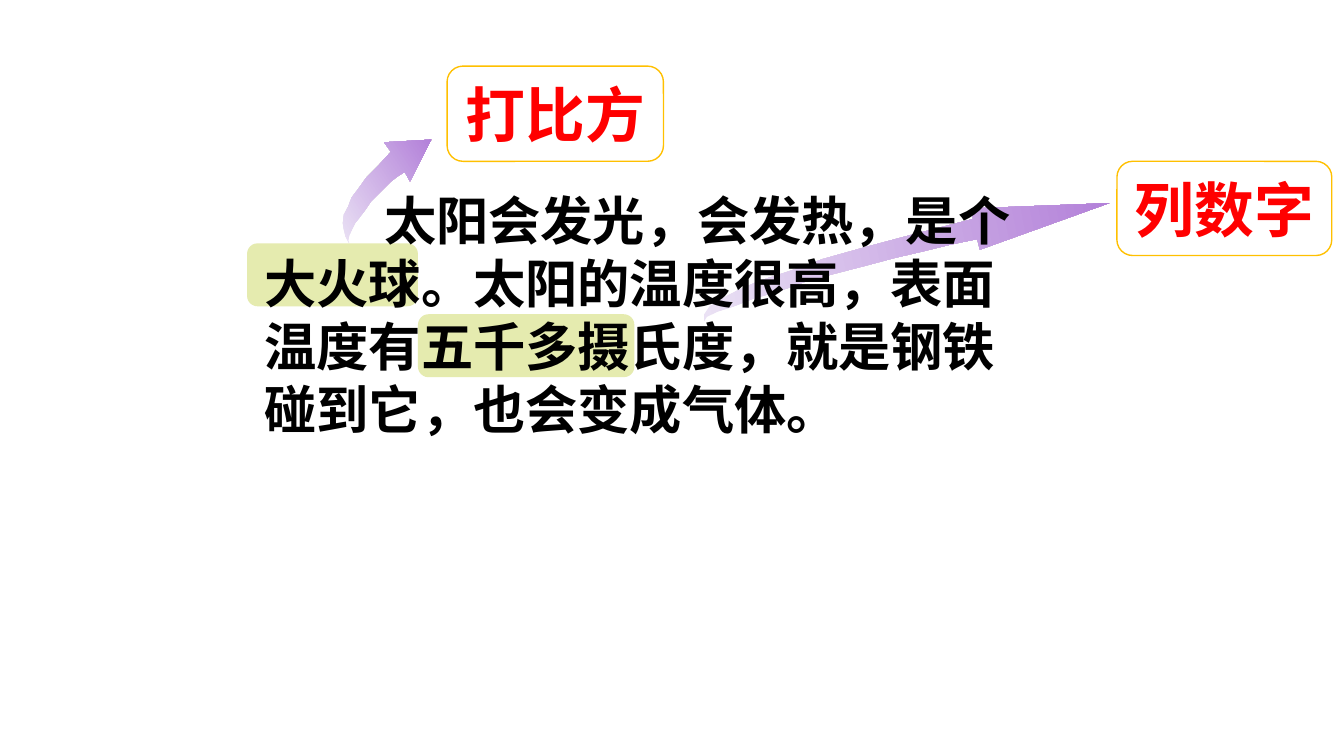
import pptx
import pptx.dml.color
import pptx.enum.shapes
import pptx.enum.text
import pptx.oxml
import pptx.util

COLOURS = {
    "highlight": "E5EBAF",
    "arrow_tail": "EAE1F4",
    "arrow_head": "B381D9",
    "border": "FFC000",
    "label": "FF0000",
    "body": "000000",
}

NUMBER_ARROW = [
    (13.31, 6.07), (13.31, 5.94), (13.41, 5.79), (13.61, 5.66), (13.94, 5.49),
    (14.35, 5.31), (14.91, 5.13), (15.54, 4.9), (16.36, 4.67), (17.3, 4.42),
    (18.39, 4.14), (18.36, 3.94), (20.96, 3.84), (18.52, 4.72), (18.47, 4.52),
    (17.98, 4.62), (17.45, 4.75), (16.89, 4.88), (16.33, 5.03), (15.75, 5.18),
    (15.21, 5.33), (14.71, 5.51), (14.25, 5.64), (13.87, 5.79), (13.56, 5.89),
    (13.36, 5.99),
]
METAPHOR_ARROW = [
    (6.6, 4.6), (6.53, 4.47), (6.5, 4.34), (6.48, 4.22), (6.5, 4.06),
    (6.58, 3.91), (6.65, 3.73), (6.78, 3.56), (6.93, 3.35), (7.16, 3.12),
    (7.39, 2.87), (7.26, 2.69), (8.15, 2.64), (7.75, 3.43), (7.65, 3.25),
    (7.52, 3.33), (7.39, 3.43), (7.26, 3.56), (7.14, 3.68), (7.01, 3.81),
    (6.91, 3.96), (6.81, 4.09), (6.71, 4.22), (6.65, 4.34), (6.6, 4.45),
    (6.58, 4.55),
]
PASSAGE = "太阳会发光，会发热，是个大火球。太阳的温度很高，表面温度有五千多摄氏度，就是钢铁碰到它，也会变成气体。"


class LessonSlide:
    """Draws the styled elements of the lesson on one slide."""

    label_font = "Times New Roman"
    body_font = "Noto Sans CJK SC"

    def __init__(self, slide):
        self.slide = slide

    def colour(self, name):
        return pptx.dml.color.RGBColor.from_string(COLOURS[name])

    def lengths(self, *values):
        return [pptx.util.Cm(value) for value in values]

    def add_run(self, paragraph, text, font_name, size, colour):
        run = paragraph.add_run()
        run.text = text
        run.font.name = font_name
        run.font.size = pptx.util.Pt(size)
        run.font.bold = True
        run.font.color.rgb = self.colour(colour)
        return run

    def rounded_box(self, *place):
        shape = self.slide.shapes.add_shape(
            pptx.enum.shapes.MSO_SHAPE.ROUNDED_RECTANGLE, *self.lengths(*place))
        shape.shadow.inherit = False
        return shape

    def highlight(self, *place):
        shape = self.rounded_box(*place)
        shape.fill.solid()
        shape.fill.fore_color.rgb = self.colour("highlight")
        shape.line.fill.background()

    def label(self, text, *place):
        shape = self.rounded_box(*place)
        shape.fill.background()
        shape.line.color.rgb = self.colour("border")
        shape.line.width = pptx.util.Pt(0.75)
        frame = shape.text_frame
        frame.word_wrap = False
        frame.vertical_anchor = pptx.enum.text.MSO_ANCHOR.MIDDLE
        paragraph = frame.paragraphs[0]
        paragraph.alignment = pptx.enum.text.PP_ALIGN.CENTER
        self.add_run(paragraph, text, self.label_font, 32, "label")

    def curved_arrow(self, points, angle):
        start, *others = [self.lengths(*point) for point in points]
        builder = self.slide.shapes.build_freeform(*start)
        builder.add_line_segments(others, close=True)
        shape = builder.convert_to_shape()
        shape.shadow.inherit = False
        shape.line.fill.background()
        shape.fill.gradient()
        shape.fill.gradient_angle = angle
        for stop, name in zip(shape.fill.gradient_stops, ("arrow_tail", "arrow_head")):
            stop.color.rgb = self.colour(name)

    def passage(self, text, *place):
        box = self.slide.shapes.add_textbox(*self.lengths(*place))
        box.text_frame.word_wrap = True
        paragraph = box.text_frame.paragraphs[0]
        paragraph.line_spacing = pptx.util.Pt(33.75)
        properties = paragraph._p.get_or_add_pPr()
        properties.set("marL", str(pptx.util.Cm(0.71)))
        properties.set("indent", str(pptx.util.Cm(2.26)))
        run = self.add_run(paragraph, text, self.body_font, 28, "body")
        east_asian = pptx.oxml.parse_xml(
            '<a:ea xmlns:a="http://schemas.openxmlformats.org/drawingml/2006/main" '
            f'typeface="{self.body_font}"/>')
        run.font._element.append(east_asian)


def main():
    presentation = pptx.Presentation()
    presentation.slide_width = pptx.util.Cm(25.4)
    presentation.slide_height = presentation.slide_width * 9 // 16
    lesson = LessonSlide(presentation.slides.add_slide(presentation.slide_layouts[6]))
    lesson.highlight(7.9, 5.94, 4.09, 1.19)
    lesson.curved_arrow(NUMBER_ARROW, 11)
    lesson.label("列数字", 21.11, 3.05, 4.06, 1.78)
    lesson.highlight(4.67, 4.6, 3.23, 1.19)
    lesson.curved_arrow(METAPHOR_ARROW, 33)
    lesson.label("打比方", 8.45, 1.25, 4.09, 1.8)
    lesson.passage(PASSAGE, 4.04, 3.43, 15.54, 4.06)
    presentation.save("out.pptx")


if __name__ == "__main__":
    main()
